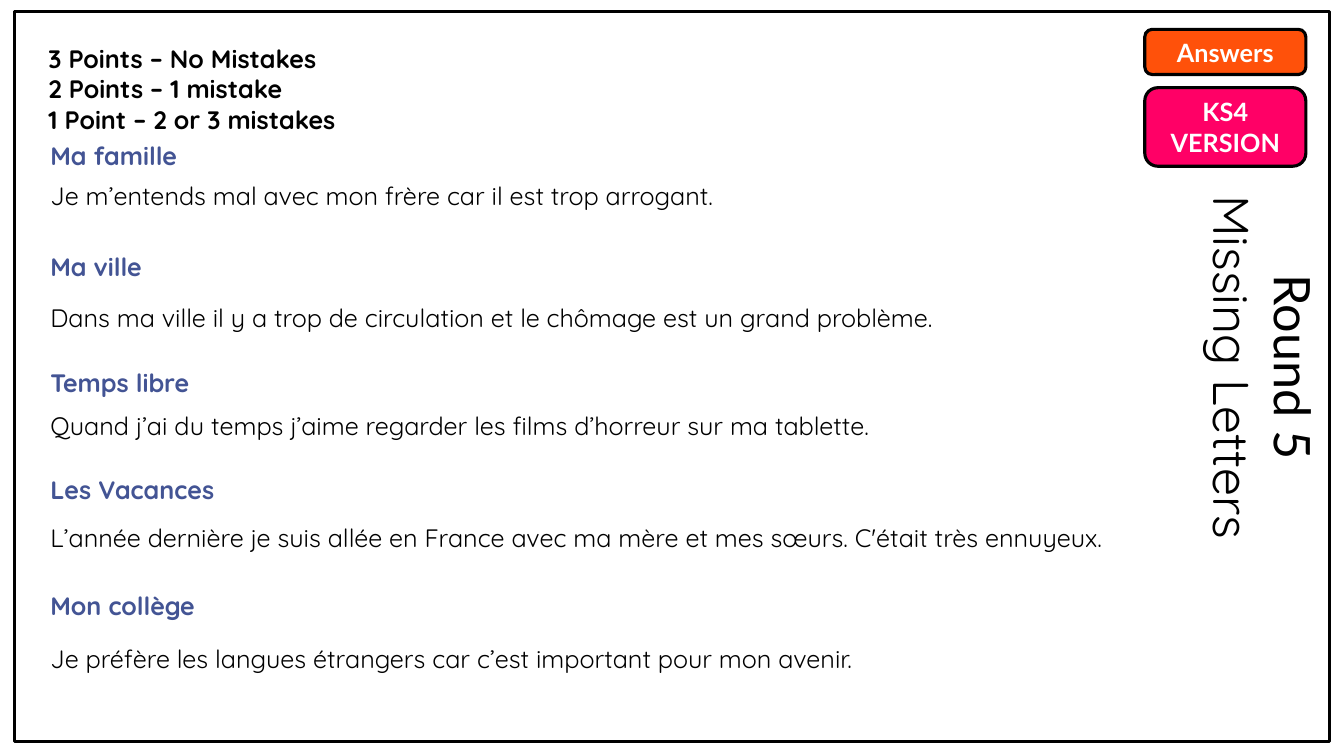
from pptx import Presentation
from pptx import util as u
from pptx.dml.color import RGBColor
from pptx.enum import shapes, text

COLOURS = {
    "ink": "000000",
    "heading": "435494",
    "white": "FFFFFF",
    "pink": "FF0066",
    "orange": "FF510A",
}
TOPICS = [
    ("Ma famille", 3.4, "Je m’entends mal avec mon frère car il est trop arrogant.", 4.42, 20.55),
    ("Ma ville", 6.22, "Dans ma ville il y a trop de circulation et le chômage est un grand problème.", 7.49, 24.77),
    ("Temps libre", 9.12, "Quand j’ai du temps j’aime regarder les films d’horreur sur ma tablette.", 10.21, 25.45),
    ("Les Vacances", 11.84, "L’année dernière je suis allée en France avec ma mère et mes sœurs. C'était très ennuyeux.", 13.03, 30.25),
    ("Mon collège", 14.76, "Je préfère les langues étrangers car c’est important pour mon avenir.", 16.08, 26.72),
]


def colour(name):
    return RGBColor.from_string(COLOURS[name])


def write(p, words, font="Quicksand", size=18, ink="ink", bold=False, centred=False):
    p.alignment = text.PP_ALIGN.CENTER if centred else text.PP_ALIGN.LEFT
    r = p.add_run()
    r.text = words
    r.font.name = font
    r.font.size = u.Pt(size)
    r.font.bold = bold
    r.font.color.rgb = colour(ink)


class QuizSlide:
    line_width = u.Pt(2.25)

    def __init__(self, prs):
        self.s = prs.slides.add_slide(prs.slide_layouts[6])

    def box(self, kind, x, y, w, h, fill=None):
        sp = self.s.shapes.add_shape(kind, u.Cm(x), u.Cm(y), u.Cm(w), u.Cm(h))
        sp.shadow.inherit = False
        if fill:
            sp.fill.solid()
            sp.fill.fore_color.rgb = colour(fill)
        else:
            sp.fill.background()
        sp.line.color.rgb = colour("ink")
        sp.line.width = self.line_width
        return sp

    def button(self, words, y, h, fill):
        sp = self.box(shapes.MSO_SHAPE.ROUNDED_RECTANGLE, 28.85, y, 4.06, h, fill)
        tf = sp.text_frame
        tf.word_wrap = True
        tf.vertical_anchor = text.MSO_ANCHOR.MIDDLE
        write(tf.paragraphs[0], words, font="Lato", ink="white", bold=True, centred=True)

    def label(self, lines, x, y, w, h, rotation=0, **style):
        sp = self.s.shapes.add_textbox(u.Cm(x), u.Cm(y), u.Cm(w), u.Cm(h))
        sp.rotation = rotation
        tf = sp.text_frame
        tf.word_wrap = True
        tf.auto_size = text.MSO_AUTO_SIZE.SHAPE_TO_FIT_TEXT
        for i, (words, font) in enumerate(lines):
            p = tf.add_paragraph() if i else tf.paragraphs[0]
            write(p, words, font=font, **style)


def main():
    prs = Presentation()
    prs.slide_width, prs.slide_height = u.Cm(33.87), u.Cm(19.05)
    quiz = QuizSlide(prs)

    quiz.box(shapes.MSO_SHAPE.RECTANGLE, 0.36, 0.3, 33.15, 18.39)
    quiz.label([("Round 5", "Lato"), ("Missing Letters", "Quicksand")],
               26.47, 7.59, 10.72, 3.33, rotation=90, size=36, centred=True)

    for heading, heading_y, sentence, sentence_y, width in TOPICS:
        quiz.label([(heading, "Quicksand")], 1.02, heading_y, 13.21, 1.02, ink="heading", bold=True)
        quiz.label([(sentence, "Quicksand")], 1.02, sentence_y, width, 1.02)

    quiz.button("KS4 VERSION", 2.21, 1.98, "pink")
    quiz.button("Answers", 0.74, 1.14, "orange")

    scoring = ["3 Points – No Mistakes", "2 Points – 1 mistake", "1 Point – 2 or 3 mistakes"]
    quiz.label([(rule, "Quicksand") for rule in scoring], 0.97, 0.97, 27.23, 2.57, bold=True)

    prs.save("out.pptx")


if __name__ == "__main__":
    main()
